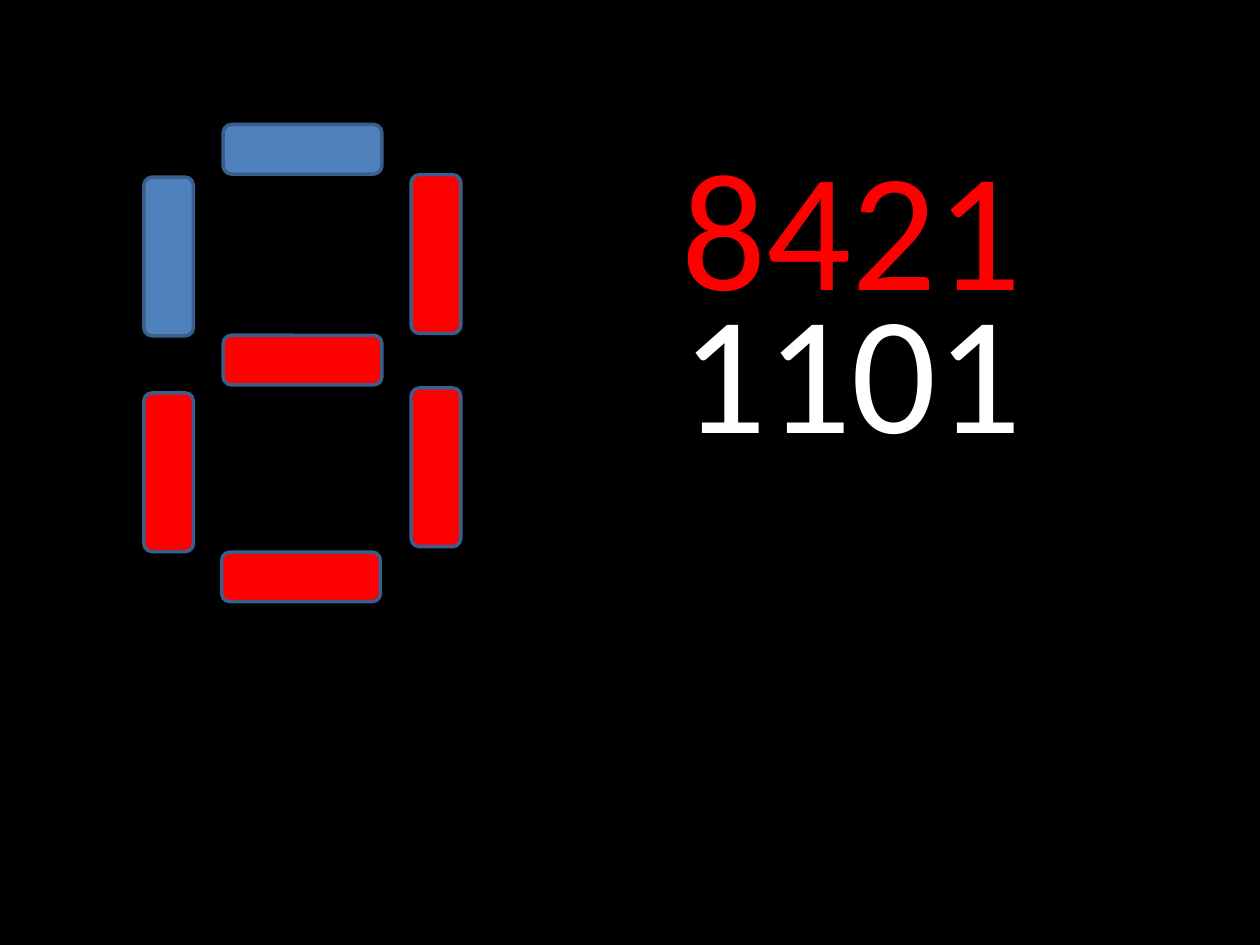
from pptx import Presentation
from pptx.dml.color import RGBColor as RGB
from pptx.enum.shapes import MSO_SHAPE as Shape
from pptx.util import Cm, Pt

BLACK = RGB(0x00, 0x00, 0x00)
WHITE = RGB(0xFF, 0xFF, 0xFF)
RED = RGB(0xFF, 0x00, 0x00)
BLUE = RGB(0x4F, 0x81, 0xBD)
EDGE = RGB(0x3A, 0x5F, 0x8C)

LONG, THICK = 3.2, 1
BARS = [
    (4.5, 2.51, 0, BLUE),
    (4.5, 6.76, 0, RED),
    (4.47, 11.13, 0, RED),
    (7.19, 8.92, 270, RED),
    (1.8, 9.02, 270, RED),
    (7.19, 4.62, 270, RED),
    (1.8, 4.67, 270, BLUE),
]
CODES = [("8421", 2.34, 8.46, RED), ("1101", 5.23, 4.37, WHITE)]

deck = Presentation()
deck.slide_width, deck.slide_height = Cm(25.4), Cm(19.05)
slide = deck.slides.add_slide(deck.slide_layouts[6])
back = slide.background.fill
back.solid()
back.fore_color.rgb = BLACK


def add_bar(left, top, turn, color):
    bar = slide.shapes.add_shape(
        Shape.ROUNDED_RECTANGLE, Cm(left), Cm(top), Cm(LONG), Cm(THICK))
    bar.rotation = turn
    bar.shadow.inherit = False
    bar.fill.solid()
    bar.fill.fore_color.rgb = color
    bar.line.color.rgb = EDGE
    bar.line.width = Pt(2)


def add_code(text, top, height, color):
    box = slide.shapes.add_textbox(Cm(13.49), Cm(top), Cm(9.8), Cm(height))
    frame = box.text_frame
    frame.word_wrap = True
    frame.text = text
    font = frame.paragraphs[0].runs[0].font
    font.name = "Calibri"
    font.size = Pt(96)
    font.color.rgb = color


for bar in BARS:
    add_bar(*bar)
for code in CODES:
    add_code(*code)

deck.save("out.pptx")
